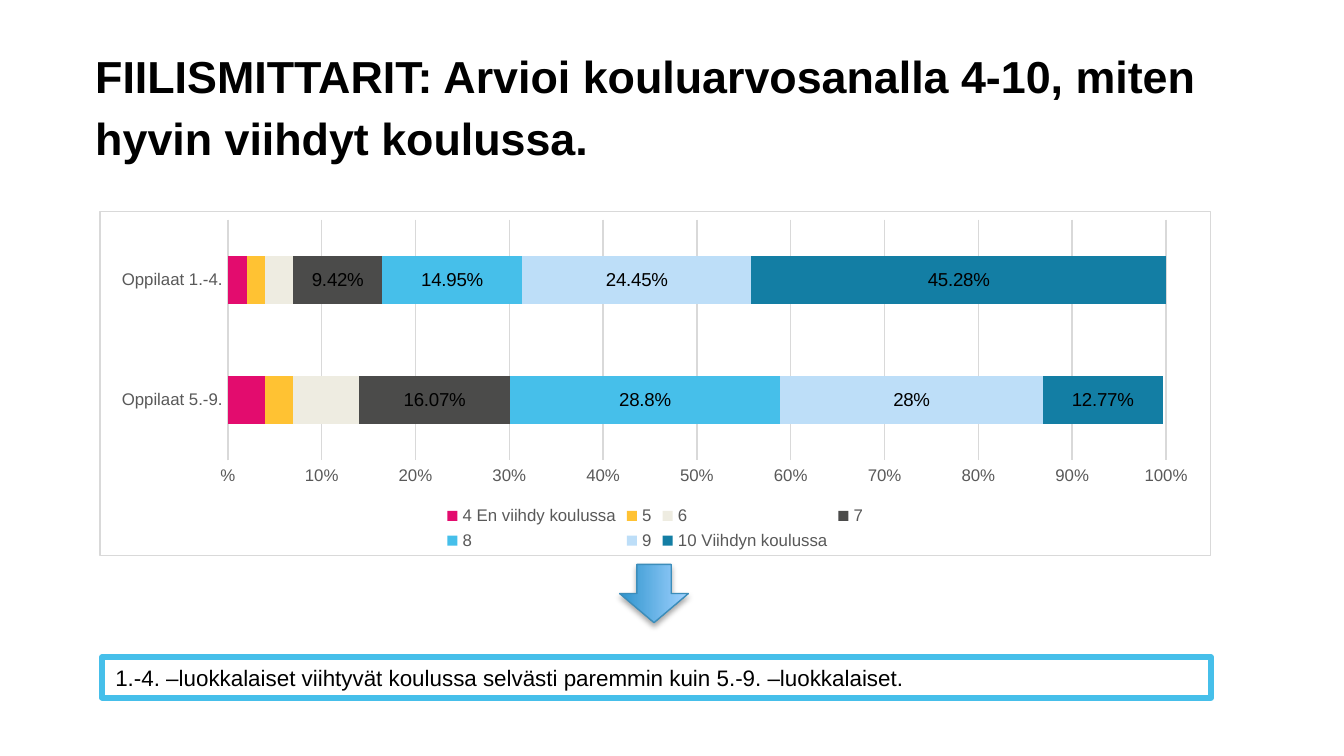
from lxml import etree
from pptx import Presentation
from pptx.chart.data import CategoryChartData
from pptx.dml.color import RGBColor
from pptx.enum.chart import XL_CHART_TYPE, XL_LABEL_POSITION, XL_LEGEND_POSITION, XL_TICK_MARK
from pptx.enum.shapes import MSO_SHAPE
from pptx.enum.text import MSO_ANCHOR, MSO_AUTO_SIZE, PP_ALIGN
from pptx.oxml import parse_xml
from pptx.util import Cm, Pt

BAR_STACKED = XL_CHART_TYPE.BAR_STACKED
CENTER = XL_LABEL_POSITION.CENTER
LEGEND_BOTTOM = XL_LEGEND_POSITION.BOTTOM
NO_TICK = XL_TICK_MARK.NONE
RECTANGLE = MSO_SHAPE.RECTANGLE
RIGHT_ARROW = MSO_SHAPE.RIGHT_ARROW
ANCHOR_BOTTOM = MSO_ANCHOR.BOTTOM
ANCHOR_MIDDLE = MSO_ANCHOR.MIDDLE
GROW = MSO_AUTO_SIZE.SHAPE_TO_FIT_TEXT
NO_FIT = MSO_AUTO_SIZE.NONE
LEFT = PP_ALIGN.LEFT

FONT = "Arial"
GRID = "D9D9D9"
GREY = "595959"
PERCENT = "#.##%"
NS = ('xmlns:a="http://schemas.openxmlformats.org/drawingml/2006/main" '
      'xmlns:c="http://schemas.openxmlformats.org/drawingml/2006/chart"')

GRADES = ["Oppilaat 5.-9.", "Oppilaat 1.-4."]
# name, values by grade group, colour, labelled
SERIES = [
    ("4 En viihdy koulussa", (0.04, 0.02), "E30C6E", False),
    ("5", (0.03, 0.02), "FFC233", False),
    ("6", (0.07, 0.03), "EEECE1", False),
    ("7", (0.1607, 0.0942), "4B4B4A", True),
    ("8", (0.288, 0.1495), "46BFEA", True),
    ("9", (0.28, 0.2445), "BDDEF8", True),
    ("10 Viihdyn koulussa", (0.1277, 0.4528), "137EA4", True),
]


def rgb(color):
    return RGBColor.from_string(color)


def style_font(font, size, color, bold=False):
    font.name = FONT
    font.size = Pt(size)
    font.bold = bold
    font.color.rgb = rgb(color)


def style_line(line, color, width):
    line.color.rgb = rgb(color)
    line.width = Pt(width)


def add_title(s, text):
    sp = s.shapes.title
    sp.left, sp.top, sp.width, sp.height = Cm(1.8), Cm(0.79), Cm(21.16), Cm(2.31)
    tf = sp.text_frame
    tf.word_wrap = True
    tf.auto_size = NO_FIT
    tf.vertical_anchor = ANCHOR_BOTTOM
    tf.margin_left = tf.margin_top = tf.margin_bottom = 0
    tf.margin_right = Cm(0.25)
    p = tf.paragraphs[0]
    p.alignment = LEFT
    p.line_spacing = Pt(33)
    r = p.add_run()
    r.text = text
    style_font(r.font, 24, "000000", bold=True)


def add_conclusion(s, text):
    sp = s.shapes.add_shape(RECTANGLE, Cm(1.93), Cm(12.42), Cm(20.96), Cm(0.77))
    sp.shadow.inherit = False
    sp.fill.solid()
    sp.fill.fore_color.rgb = rgb("FFFFFF")
    style_line(sp.line, "46BFEA", 3)
    etree.SubElement(sp.line._get_or_add_ln(),
                     "{http://schemas.openxmlformats.org/drawingml/2006/main}round")
    tf = sp.text_frame
    tf.word_wrap = True
    tf.auto_size = GROW
    tf.vertical_anchor = ANCHOR_MIDDLE
    p = tf.paragraphs[0]
    p.alignment = LEFT
    r = p.add_run()
    r.text = text
    style_font(r.font, 12, "000000")


def style_axis(axis):
    axis.major_tick_mark = axis.minor_tick_mark = NO_TICK
    style_font(axis.tick_labels.font, 9, GREY)


def frame_chart(chart):
    """Give the chart its white background, border and fixed plot area."""
    space = chart._chartSpace
    space.find("{*}chart").addnext(parse_xml(
        f'<c:spPr {NS}><a:solidFill><a:srgbClr val="FFFFFF"/></a:solidFill>'
        f'<a:ln w="9525"><a:solidFill><a:srgbClr val="{GRID}"/></a:solidFill></a:ln></c:spPr>'))
    plot_area = space.find("{*}chart/{*}plotArea")
    for layout in plot_area.findall("{*}layout"):
        plot_area.remove(layout)
    sizes = "".join(f'<c:{key} val="{val}"/>' for key, val in
                    (("x", 0.115), ("y", 0.023), ("w", 0.845), ("h", 0.7)))
    plot_area.insert(0, parse_xml(
        f'<c:layout {NS}><c:manualLayout><c:layoutTarget val="inner"/>'
        f'<c:xMode val="edge"/><c:yMode val="edge"/>{sizes}</c:manualLayout></c:layout>'))


def add_grade_chart(s):
    data = CategoryChartData(number_format=PERCENT)
    data.categories = GRADES
    for name, values, _, _ in SERIES:
        data.add_series(name, values)
    chart = s.shapes.add_chart(BAR_STACKED, Cm(1.88), Cm(3.99), Cm(21.01), Cm(6.53), data).chart
    chart.has_title = False
    style_font(chart.font, 10, "000000")
    frame_chart(chart)

    plot = chart.plots[0]
    plot.gap_width, plot.overlap = 150, 100
    plot.vary_by_categories = False
    for series, (_, _, color, labelled) in zip(plot.series, SERIES):
        series.format.fill.solid()
        series.format.fill.fore_color.rgb = rgb(color)
        if labelled:
            labels = series.data_labels
            labels.show_value = True
            labels.position = CENTER
            labels.number_format = PERCENT
            labels.number_format_is_linked = False
            style_font(labels.font, 10, "000000")

    style_axis(chart.category_axis)
    style_line(chart.category_axis.format.line, GRID, 0.75)
    axis = chart.value_axis
    style_axis(axis)
    axis.format.line.fill.background()
    axis.minimum_scale, axis.maximum_scale, axis.major_unit = 0, 1, 0.1
    axis.tick_labels.number_format = PERCENT
    axis.tick_labels.number_format_is_linked = False
    axis.has_major_gridlines = True
    style_line(axis.major_gridlines.format.line, GRID, 0.75)

    chart.has_legend = True
    chart.legend.position = LEGEND_BOTTOM
    chart.legend.include_in_layout = False
    style_font(chart.legend.font, 9, GREY)


def add_down_arrow(s):
    sp = s.shapes.add_shape(RIGHT_ARROW, Cm(11.81), Cm(10.57), Cm(1.1), Cm(1.3))
    sp.rotation = 90
    sp.fill.gradient()
    sp.fill.gradient_angle = 90
    for stop, color in zip(sp.fill.gradient_stops, ("2E94CD", "A1D2FF")):
        stop.color.rgb = rgb(color)
    style_line(sp.line, "3C8DBA", 0.75)
    sp._element.spPr.append(parse_xml(
        f'<a:effectLst {NS}><a:outerShdw blurRad="{Pt(3.1)}" dist="{Pt(1.8)}" dir="5400000" '
        'rotWithShape="0"><a:srgbClr val="000000"><a:alpha val="35000"/></a:srgbClr>'
        '</a:outerShdw></a:effectLst>'))


def main():
    prs = Presentation()
    prs.slide_width, prs.slide_height = Cm(25.4), Cm(14.29)
    s = prs.slides.add_slide(prs.slide_layouts[5])
    add_title(s, "FIILISMITTARIT: Arvioi kouluarvosanalla 4-10, miten hyvin viihdyt koulussa.")
    add_conclusion(s, "1.-4. –luokkalaiset viihtyvät koulussa selvästi paremmin kuin 5.-9. –luokkalaiset.")
    add_grade_chart(s)
    add_down_arrow(s)
    prs.save("out.pptx")


if __name__ == "__main__":
    main()
